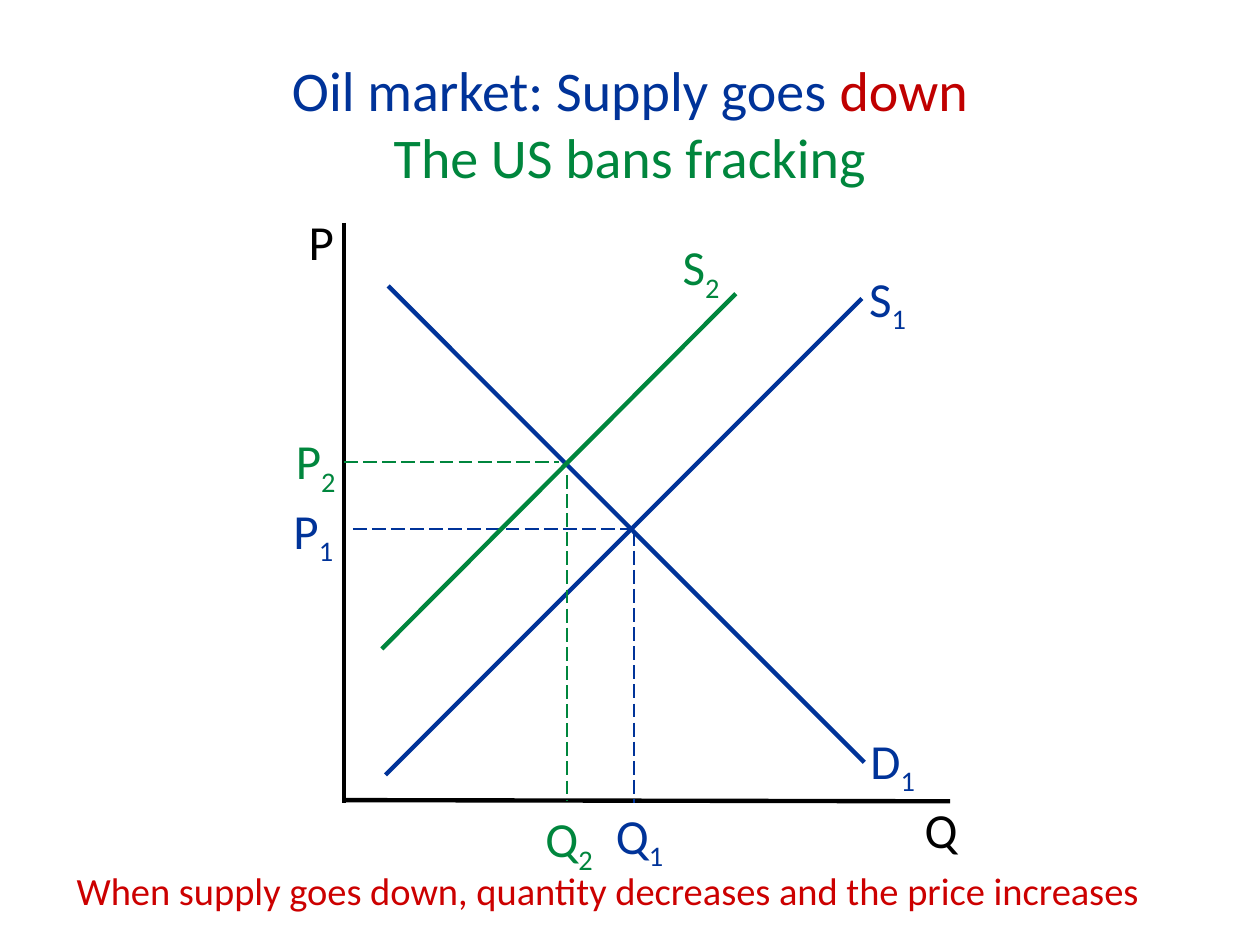
from dataclasses import dataclass

from lxml.etree import SubElement
from pptx import Presentation
from pptx.dml.color import RGBColor
from pptx.enum.dml import MSO_LINE
from pptx.enum.shapes import MSO_CONNECTOR
from pptx.enum.text import MSO_ANCHOR, MSO_AUTO_SIZE, PP_ALIGN
from pptx.oxml.ns import qn
from pptx.util import Pt

BLUE = RGBColor(0x00, 0x33, 0x99)
GREEN = RGBColor(0x00, 0x86, 0x3D)
BLACK = RGBColor(0x00, 0x00, 0x00)
DARK_RED = RGBColor(0xC0, 0x00, 0x00)
RED = RGBColor(0xCC, 0x00, 0x00)
FONT = "Calibri"


@dataclass(frozen=True)
class Line:
    x1: float
    y1: float
    x2: float
    y2: float
    color: RGBColor
    guide: bool = False


@dataclass(frozen=True)
class Label:
    text: str
    sub: str
    x: float
    y: float
    w: float
    h: float
    color: RGBColor
    spacing: float | None = None


LINES = [
    Line(220.3, 442.8, 492.5, 170.6, BLUE),  # supply 1
    Line(196.6, 127.4, 196.6, 458.6, BLACK),  # price axis
    Line(197.3, 457.2, 542.9, 457.9, BLACK),  # quantity axis
    Line(221.8, 163.4, 493.9, 435.6, BLUE),  # demand
    Line(201.6, 302.4, 360, 302.4, BLUE, guide=True),
    Line(362.2, 303.8, 362.2, 458.6, BLUE, guide=True),
    Line(218.2, 370.8, 420.5, 167.8, GREEN),  # supply 2
    Line(324, 271.4, 324, 457.2, GREEN, guide=True),
    Line(196.6, 264.2, 319.7, 264.2, GREEN, guide=True),
]

LABELS = [
    Label("D", "1", 490.3, 414, 41.8, 41, BLUE),
    Label("Q", "", 521.3, 453.6, 36.7, 41, BLACK),
    Label("P", "", 169.2, 123.8, 32.4, 35.3, BLACK, 0.8),
    Label("S", "1", 489.6, 149.8, 41.8, 41, BLUE),
    Label("P", "1", 160.6, 285.8, 41.8, 35.3, BLUE, 0.8),
    Label("Q", "1", 344.9, 460.1, 54, 35.3, BLUE, 0.8),
    Label("S", "2", 383, 131.8, 41.8, 41, GREEN),
    Label("P", "2", 162, 246.2, 41.8, 35.3, GREEN, 0.8),
    Label("Q", "2", 304.6, 462.2, 54, 35.3, GREEN, 0.8),
]


def add_text_box(s, x: float, y: float, w: float, h: float):
    tf = s.shapes.add_textbox(Pt(x), Pt(y), Pt(w), Pt(h)).text_frame
    tf.word_wrap = True
    tf.auto_size = MSO_AUTO_SIZE.SHAPE_TO_FIT_TEXT
    return tf


def set_font(p, size: float, color: RGBColor) -> None:
    p.font.name = FONT
    p.font.size = Pt(size)
    p.font.color.rgb = color


def add_run(p, text: str):
    r = p.add_run()
    r.text = text
    return r


def add_title(s) -> None:
    tf = add_text_box(s, 50.4, 27.4, 619.2, 85)
    tf.vertical_anchor = MSO_ANCHOR.MIDDLE
    topic, event = tf.paragraphs[0], tf.add_paragraph()
    for p, color in ((topic, BLUE), (event, GREEN)):
        p.alignment = PP_ALIGN.CENTER
        set_font(p, 32, color)
    add_run(topic, "Oil market: Supply goes ")
    add_run(topic, "down").font.color.rgb = DARK_RED
    add_run(event, "The US bans fracking")


def add_line(s, line: Line) -> None:
    """Draw a solid curve or axis, or a thin dashed guide."""
    c = s.shapes.add_connector(MSO_CONNECTOR.STRAIGHT, Pt(line.x1), Pt(line.y1),
                               Pt(line.x2), Pt(line.y2))
    c.line.color.rgb = line.color
    c.line.width = Pt(1 if line.guide else 2.5)
    if line.guide:
        c.line.dash_style = MSO_LINE.LONG_DASH
    SubElement(c._element.spPr, qn("a:effectLst"))


def add_label(s, label: Label) -> None:
    """Write a letter with an optional subscript."""
    p = add_text_box(s, label.x, label.y, label.w, label.h).paragraphs[0]
    set_font(p, 28, label.color)
    if label.spacing:
        p.line_spacing = label.spacing
    add_run(p, label.text)
    if label.sub:
        r = add_run(p, label.sub)
        r._r.get_or_add_rPr().set("baseline", "-25000")


def add_conclusion(s) -> None:
    p = add_text_box(s, 36.7, 491.8, 644.4, 33.8).paragraphs[0]
    set_font(p, 22, RED)
    add_run(p, "When supply goes down, quantity decreases and the price increases")


def main() -> None:
    prs = Presentation()
    prs.slide_width, prs.slide_height = Pt(720), Pt(540)
    s = prs.slides.add_slide(prs.slide_layouts[6])
    add_title(s)
    for line in LINES:
        add_line(s, line)
    for label in LABELS:
        add_label(s, label)
    add_conclusion(s)
    prs.save("out.pptx")


if __name__ == "__main__":
    main()
